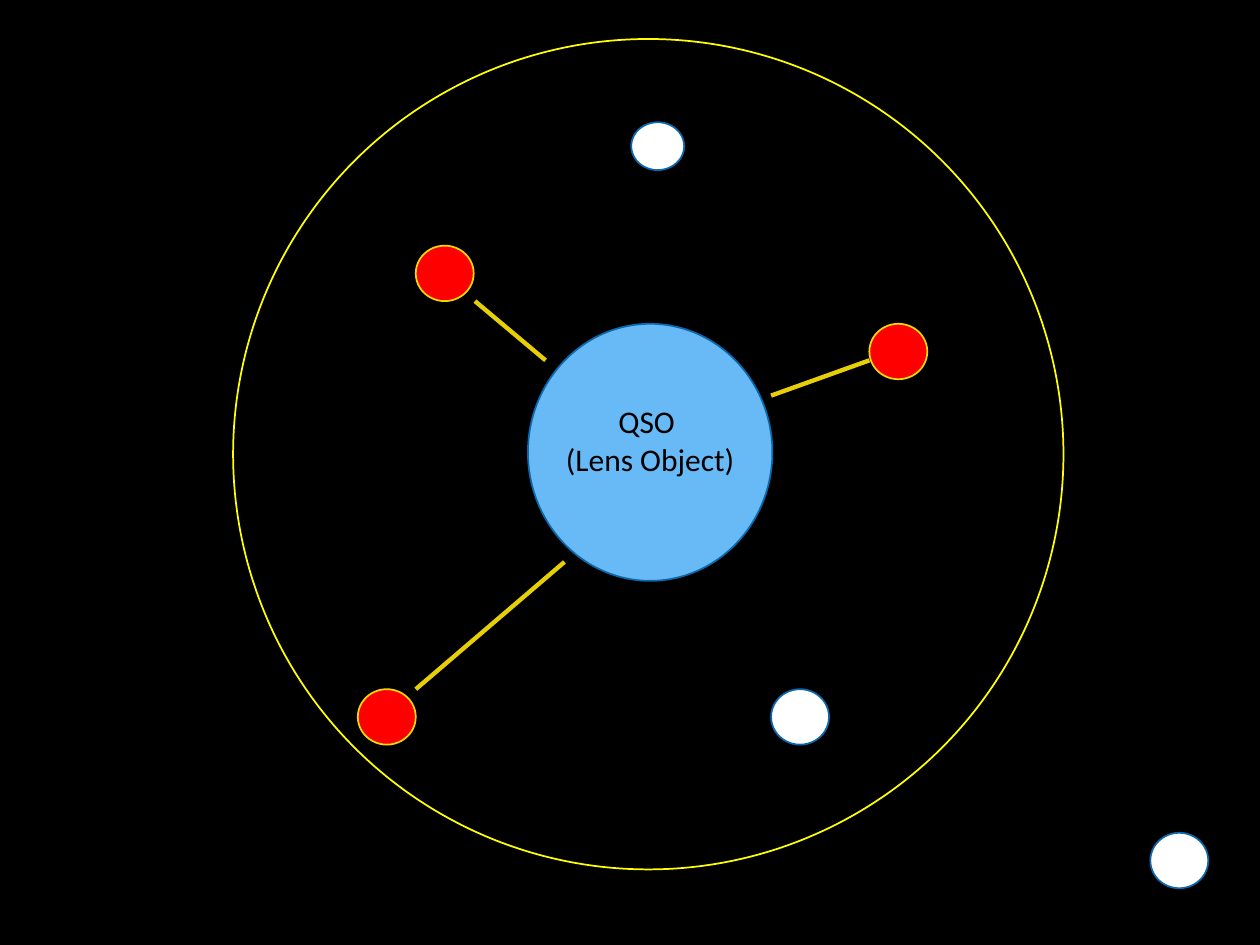
"""Build a slide of a lensing quasar with nearby galaxies inside a search radius."""
import pptx
import pptx.util
from lxml import etree
from pptx.dml.color import RGBColor
from pptx.enum.shapes import MSO_CONNECTOR, MSO_SHAPE
from pptx.enum.text import MSO_AUTO_SIZE, PP_ALIGN
from pptx.oxml.ns import qn
from pptx.util import Inches

BLACK = RGBColor(0x00, 0x00, 0x00)
WHITE = RGBColor(0xFF, 0xFF, 0xFF)
RED = RGBColor(0xFF, 0x00, 0x00)
SKY = RGBColor(0x67, 0xBA, 0xF6)
BLUE = RGBColor(0x0A, 0x68, 0xAC)
GOLD = RGBColor(0xF2, 0xD9, 0x02)
DARK_GOLD = RGBColor(0xE7, 0xCF, 0x08)
YELLOW = RGBColor(0xFF, 0xFF, 0x00)

LENS = (4.19, 2.57, 1.94, 2.04)
LABEL_AREA = (4.19, 3.14, 1.94, 0.71)
LABEL = ["QSO ", "(Lens Object)"]
RADIUS_RING = (1.85, 0.31, 6.59, 6.59)
GALAXY_SIZE = (0.46, 0.44)
LINKED_GALAXIES = [(3.3, 1.95), (6.9, 2.57), (2.84, 5.47)]
OTHER_GALAXIES = [(9.13, 6.61), (6.12, 5.47)]
SMALL_GALAXY = (5.01, 0.97, 0.42, 0.38)
LINKS = [
    (3.77, 2.39, 4.33, 2.86),
    (6.12, 3.14, 6.9, 2.86),
    (3.3, 5.47, 4.48, 4.46),
]


def add_ellipse(page, area, fill, line):
    ellipse = page.shapes.add_shape(MSO_SHAPE.OVAL, *map(Inches, area))
    ellipse.shadow.inherit = False
    if fill is None:
        ellipse.fill.background()
    else:
        ellipse.fill.solid()
        ellipse.fill.fore_color.rgb = fill
    ellipse.line.color.rgb = line
    ellipse.line.width = pptx.util.Pt(1)


def add_label(page, area, lines):
    box = page.shapes.add_textbox(*map(Inches, area))
    frame = box.text_frame
    frame.word_wrap = True
    frame.auto_size = MSO_AUTO_SIZE.SHAPE_TO_FIT_TEXT
    for index, line in enumerate(lines):
        para = frame.add_paragraph() if index else frame.paragraphs[0]
        para.alignment = PP_ALIGN.CENTER
        span = para.add_run()
        span.text = line
        span.font.name = "Calibri"
        span.font.size = pptx.util.Pt(18)
        span.font.color.rgb = BLACK


def add_link(page, ends):
    link = page.shapes.add_connector(MSO_CONNECTOR.STRAIGHT, *map(Inches, ends))
    link.line.color.rgb = DARK_GOLD
    link.line.width = pptx.util.Pt(2.5)
    etree.SubElement(link._element.spPr, qn("a:effectLst"))


def main():
    deck = pptx.Presentation()
    deck.slide_width, deck.slide_height = Inches(10), Inches(7.5)
    page = deck.slides.add_slide(deck.slide_layouts[6])
    page.background.fill.solid()
    page.background.fill.fore_color.rgb = BLACK

    add_ellipse(page, LENS, SKY, BLUE)
    add_label(page, LABEL_AREA, LABEL)
    for corner in LINKED_GALAXIES:
        add_ellipse(page, corner + GALAXY_SIZE, RED, GOLD)
    for corner in OTHER_GALAXIES:
        add_ellipse(page, corner + GALAXY_SIZE, WHITE, BLUE)
    add_ellipse(page, RADIUS_RING, None, YELLOW)
    for ends in LINKS:
        add_link(page, ends)
    add_ellipse(page, SMALL_GALAXY, WHITE, BLUE)

    deck.save("out.pptx")


if __name__ == "__main__":
    main()
